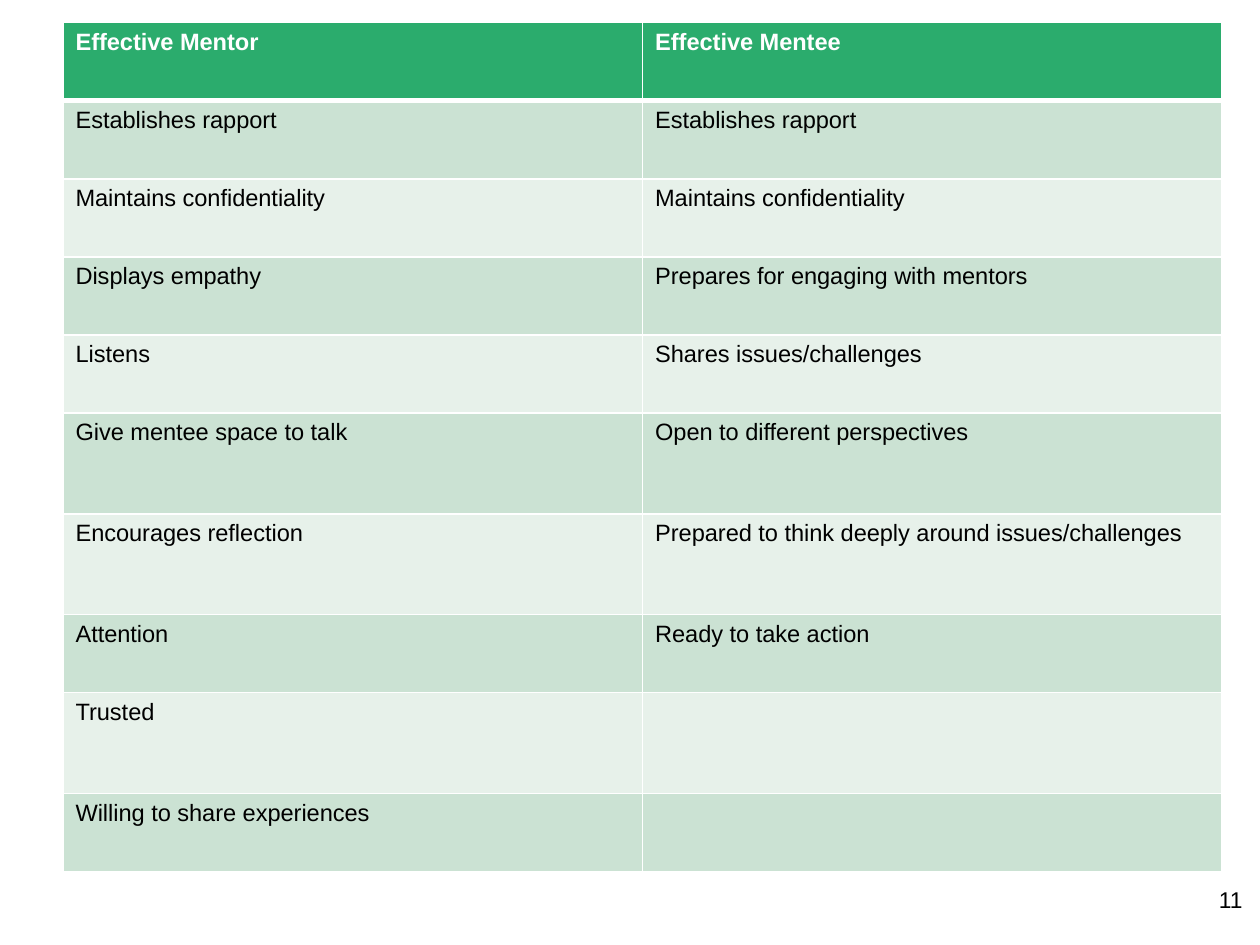
from lxml import etree
from pptx import Presentation
from pptx.dml.color import RGBColor
from pptx.enum import text
from pptx.oxml import ns
from pptx.util import Inches, Pt

ROWS = [
    ("Effective Mentor", "Effective Mentee"),
    ("Establishes rapport", "Establishes rapport"),
    ("Maintains confidentiality", "Maintains confidentiality"),
    ("Displays empathy", "Prepares for engaging with mentors"),
    ("Listens", "Shares issues/challenges"),
    ("Give mentee space to talk", "Open to different perspectives"),
    ("Encourages reflection", "Prepared to think deeply around issues/challenges"),
    ("Attention", "Ready to take action"),
    ("Trusted", ""),
    ("Willing to share experiences", ""),
]
TALL_ROWS = {5, 6, 8}
ROW_H, TALL_H, COL_W = 0.62, 0.8, 4.6
PAGE_NUMBER = "11"

WHITE = RGBColor(0xFF, 0xFF, 0xFF)
BLACK = RGBColor(0, 0, 0)
GREEN = RGBColor(0x2B, 0xAC, 0x6D)
BANDS = [RGBColor(0xE7, 0xF1, 0xEA), RGBColor(0xCB, 0xE2, 0xD3)]


def set_font(p, size, color, bold=False):
    for r in p.runs:
        r.font.name = "Arial"
        r.font.size = Pt(size)
        r.font.bold = bold
        r.font.color.rgb = color


def set_borders(cell, widths):
    tc_pr = cell._tc.get_or_add_tcPr()
    for side, width in widths.items():
        ln = etree.SubElement(tc_pr, ns.qn(f"a:ln{side}"), w=str(Pt(width)))
        fill = etree.SubElement(ln, ns.qn("a:solidFill"))
        etree.SubElement(fill, ns.qn("a:srgbClr"), val=str(WHITE))


def add_comparison(s):
    heights = [TALL_H if i in TALL_ROWS else ROW_H for i in range(len(ROWS))]
    table = s.shapes.add_table(
        len(ROWS), 2, Inches(0.5), Inches(0.18), Inches(2 * COL_W), Inches(sum(heights))
    ).table
    for col in table.columns:
        col.width = Inches(COL_W)
    for i, (row, height) in enumerate(zip(ROWS, heights)):
        header = i == 0
        table.rows[i].height = Inches(height)
        for j, words in enumerate(row):
            cell = table.cell(i, j)
            set_borders(cell, {"L": 1, "R": 1, "T": 3 if i == 1 else 1, "B": 3 if header else 1})
            cell.fill.solid()
            cell.fill.fore_color.rgb = GREEN if header else BANDS[i % 2]
            cell.text = words
            set_font(cell.text_frame.paragraphs[0], 13.5, WHITE if header else BLACK, header)


def add_page_number(s):
    tf = s.shapes.add_textbox(Inches(9.36), Inches(6.93), Inches(0.6), Inches(0.57)).text_frame
    tf.word_wrap = True
    tf.margin_left = tf.margin_right = tf.margin_top = tf.margin_bottom = Inches(0.1)
    tf.text = PAGE_NUMBER
    p = tf.paragraphs[0]
    p.alignment = text.PP_ALIGN.RIGHT
    set_font(p, 13, BLACK)


def main():
    prs = Presentation()
    prs.slide_width, prs.slide_height = Inches(10), Inches(7.5)
    s = prs.slides.add_slide(prs.slide_layouts[6])
    add_comparison(s)
    add_page_number(s)
    prs.save("out.pptx")


if __name__ == "__main__":
    main()
